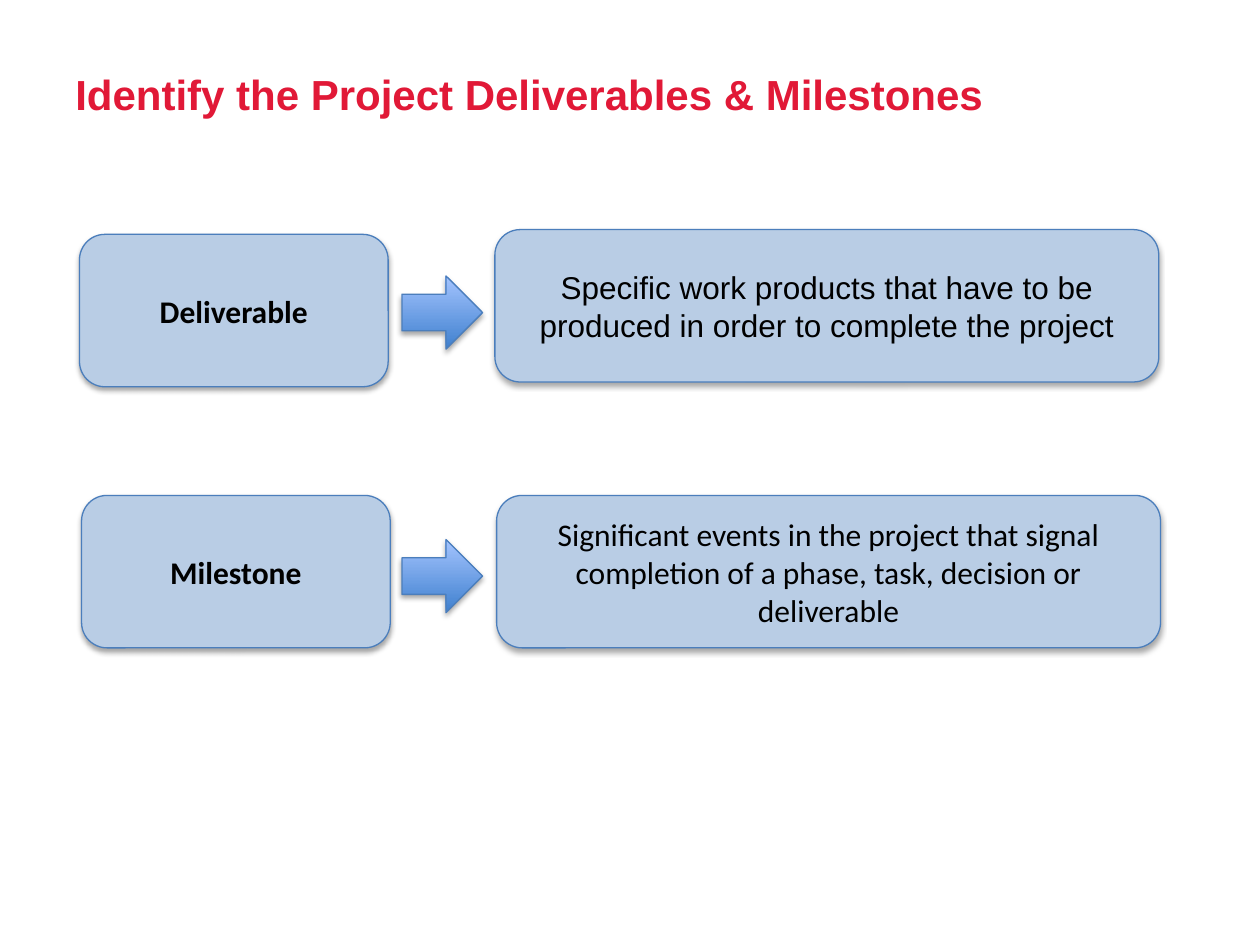
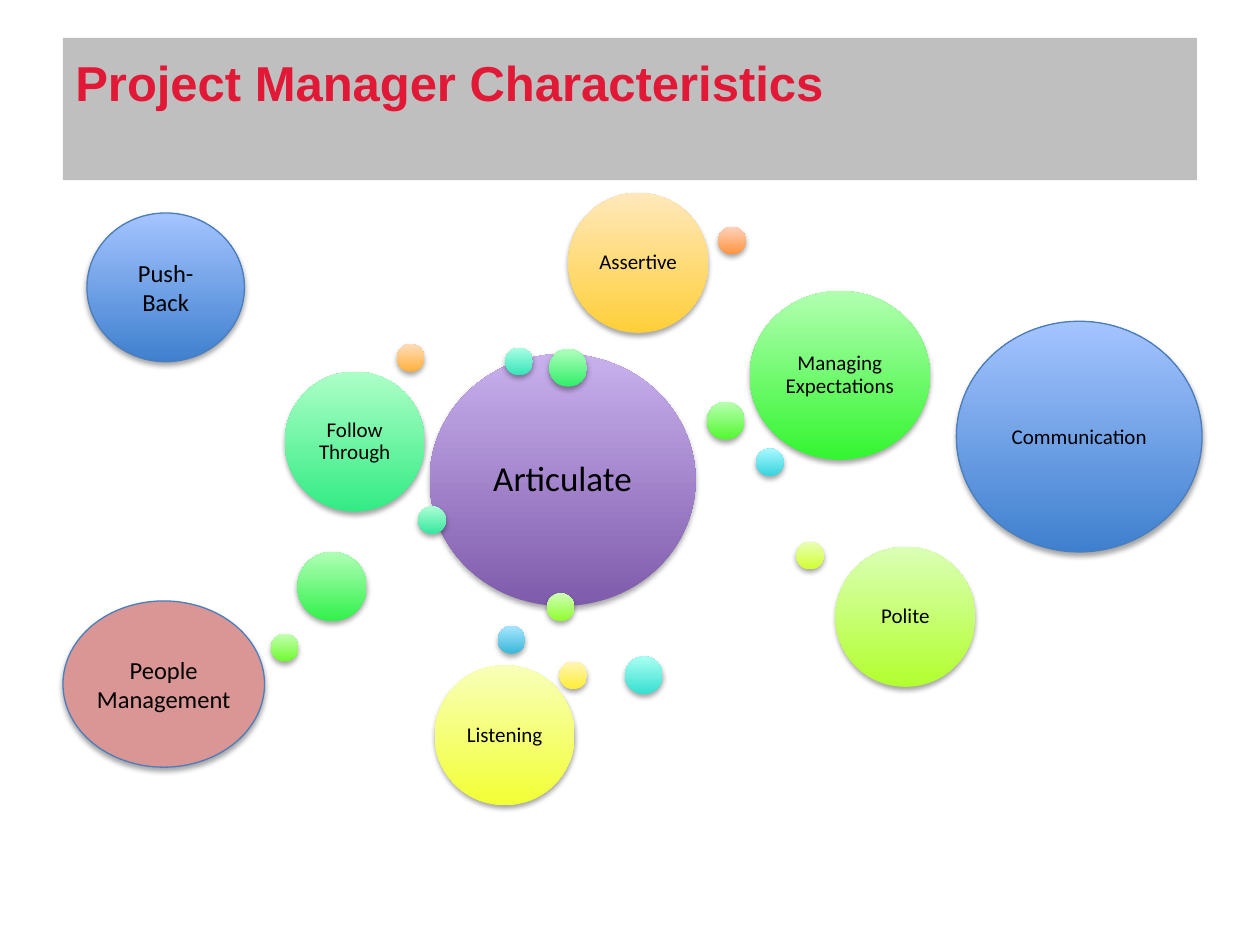
from dataclasses import dataclass

from lxml.etree import SubElement
from pptx import Presentation
from pptx.dml.color import RGBColor
from pptx.enum.shapes import MSO_SHAPE
from pptx.enum.text import MSO_ANCHOR, PP_ALIGN
from pptx.oxml.ns import qn
from pptx.util import Pt


@dataclass(frozen=True)
class Theme:
    title_font: str = "Arial"
    body_font: str = "Calibri"
    title_color: str = "E11937"
    text_color: str = "000000"
    title_band: str = "BFBFBF"
    box_fill: str = "B9CDE5"
    rose: str = "D99694"
    outline: str = "4B7EBC"
    blue: tuple = ("3F80CE", "A4C4FF")
    title_size: int = 24
    banner_size: int = 28
    box_size: int = 18
    hub_size: int = 20
    oval_size: int = 14
    bubble_size: int = 12


theme = Theme()


def write(shape, text, size, font=theme.body_font, bold=False, color=theme.text_color,
          align=PP_ALIGN.CENTER, anchor=MSO_ANCHOR.MIDDLE, side=7.2, top=3.6, spacing=1.0):
    frame = shape.text_frame
    frame.word_wrap = True
    frame.vertical_anchor = anchor
    frame.margin_left = frame.margin_right = Pt(side)
    frame.margin_top, frame.margin_bottom = Pt(top), Pt(3.6)
    paragraph = frame.paragraphs[0]
    paragraph.alignment = align
    paragraph.line_spacing = spacing
    run = paragraph.add_run()
    run.text = text
    run.font.name, run.font.size, run.font.bold = font, Pt(size), bold
    run.font.color.rgb = RGBColor.from_string(color)


def draw(slide, preset, left, top, width, height, fill, outlined=True):
    """Add a softly shadowed shape; a pair of colours runs from bottom to top."""
    shape = slide.shapes.add_shape(preset, Pt(left), Pt(top), Pt(width), Pt(height))
    if isinstance(fill, tuple):
        shape.fill.gradient()
        shape.fill.gradient_angle = 90
        for stop, color in zip(shape.fill.gradient_stops, fill):
            stop.color.rgb = RGBColor.from_string(color)
    else:
        shape.fill.solid()
        shape.fill.fore_color.rgb = RGBColor.from_string(fill)
    if outlined:
        shape.line.color.rgb = RGBColor.from_string(theme.outline)
        shape.line.width = Pt(0.75)
    else:
        shape.line.fill.background()
    shape.shadow.inherit = False
    effects = shape._element.spPr.find(qn("a:effectLst"))
    shadow = SubElement(effects, qn("a:outerShdw"), blurRad=str(Pt(3.1)), dist=str(Pt(1.8)),
                        dir="5400000", rotWithShape="0")
    black = SubElement(shadow, qn("a:srgbClr"), val="000000")
    SubElement(black, qn("a:alpha"), val="35000")
    return shape


deck = Presentation()
deck.slide_width, deck.slide_height = Pt(720), Pt(540)

# Slides and their titles
slides = []
for title, size, height, top_inset, band in [
    ("Identify the Project Deliverables & Milestones", theme.title_size, 90, 17.4, None),
    ("Project Manager Characteristics", theme.banner_size, 81.4, 8.5, theme.title_band),
]:
    slide = deck.slides.add_slide(deck.slide_layouts[6])
    heading = slide.shapes.add_textbox(Pt(36), Pt(21.6), Pt(648), Pt(height))
    if band:
        heading.fill.solid()
        heading.fill.fore_color.rgb = RGBColor.from_string(band)
    write(heading, title, size, theme.title_font, True, theme.title_color,
          PP_ALIGN.LEFT, MSO_ANCHOR.TOP, top=top_inset)
    slides.append(slide)
definitions, characteristics = slides

# Slide 1: each term points to its meaning
for term, term_left, term_top, arrow_top, meaning, meaning_left, meaning_top, font in [
    ("Deliverable", 45.4, 133.9, 157.7,
     "Specific work products that have to be produced in order to complete the project",
     282.8, 131.2, theme.title_font),
    ("Milestone", 46.6, 283.1, 308.3,
     "Significant events in the project that signal completion of a phase, task, decision or deliverable",
     283.8, 283.1, theme.body_font),
]:
    term_box = draw(definitions, MSO_SHAPE.ROUNDED_RECTANGLE, term_left, term_top,
                    176.4, 87.1, theme.box_fill)
    write(term_box, term, theme.box_size, bold=True)
    meaning_box = draw(definitions, MSO_SHAPE.ROUNDED_RECTANGLE, meaning_left, meaning_top,
                       379.4, 87.1, theme.box_fill)
    write(meaning_box, meaning, theme.box_size, font)
    draw(definitions, MSO_SHAPE.RIGHT_ARROW, 229.7, arrow_top, 46.1, 41.8, theme.blue)

# Slide 2: hub in the middle
hub = draw(characteristics, MSO_SHAPE.OVAL, 245.5, 202.3, 152, 144, ("7F5BAB", "C8B0ED"), False)
write(hub, "Articulate", theme.hub_size, side=5.8, spacing=0.9)

# Slide 2: bubbles and dots around the hub, from blue through green to orange
DOT, LARGE_DOT, BALL, BUBBLE = 15.8, 21.6, 39.6, 80
for left, top, width, height, dark, light, trait in [
    (284.4, 357.8, DOT, DOT, "39B7D8", "A7E6FF", None),
    (432, 256.3, DOT, DOT, "37D3DC", "A9F8FF", None),
    (357.1, 375.1, LARGE_DOT, LARGE_DOT, "36E0D0", "AAFFF3", None),
    (288.7, 198.7, DOT, DOT, "35E4B8", "ABFFE3", None),
    (239, 289.4, DOT, DOT, "34E79F", "ACFFD4", None),
    (162.7, 212.4, BUBBLE, BUBBLE, "33EB84", "ADFFC7", "Follow Through"),
    (313.9, 199.4, LARGE_DOT, LARGE_DOT, "32EE69", "AFFFBD", None),
    (169.9, 315.4, BALL, BALL, "31F14B", "B0FFB6", None),
    (428.4, 166.3, 103, 96.5, "33F530", "B2FFB1", "Managing Expectations"),
    (403.9, 229.7, LARGE_DOT, LARGE_DOT, "51F82F", "B9FFB2", None),
    (154.8, 362.2, DOT, DOT, "70FB2E", "C3FFB3", None),
    (312.5, 339.1, DOT, DOT, "91FE2E", "CEFFB5", None),
    (477.4, 312.5, BUBBLE, BUBBLE, "B2FF2F", "DBFFB6", "Polite"),
    (455, 309.6, DOT, DOT, "D2FF32", "E9FFB7", None),
    (248.4, 380.2, BUBBLE, BUBBLE, "F2FF34", "F8FFB8", "Listening"),
    (319.7, 378, DOT, DOT, "FFED37", "FFF6B9", None),
    (324.7, 110.2, BUBBLE, BUBBLE, "FFCF39", "FFE8BB", "Assertive"),
    (226.8, 196.6, DOT, DOT, "FFB23C", "FFDCBC", None),
    (410.4, 129.6, DOT, DOT, "FF953E", "FFD2BD", None),
]:
    bubble = draw(characteristics, MSO_SHAPE.OVAL, left, top, width, height, (dark, light), False)
    if trait:
        write(bubble, trait, theme.bubble_size, side=3.6, spacing=0.9)

# Slide 2: outlined ovals at the edges
for trait, left, top, width, height, fill, size, side in [
    ("Push-Back", 49.7, 121.7, 90, 85, theme.blue, theme.oval_size, 7.2),
    ("Communication", 546.5, 183.6, 140.4, 131.8, theme.blue, theme.bubble_size, 0),
    ("People Management", 36, 343.4, 115.2, 95, theme.rose, theme.oval_size, 0),
]:
    oval = draw(characteristics, MSO_SHAPE.OVAL, left, top, width, height, fill)
    write(oval, trait, size, side=side)

deck.save("out.pptx")
